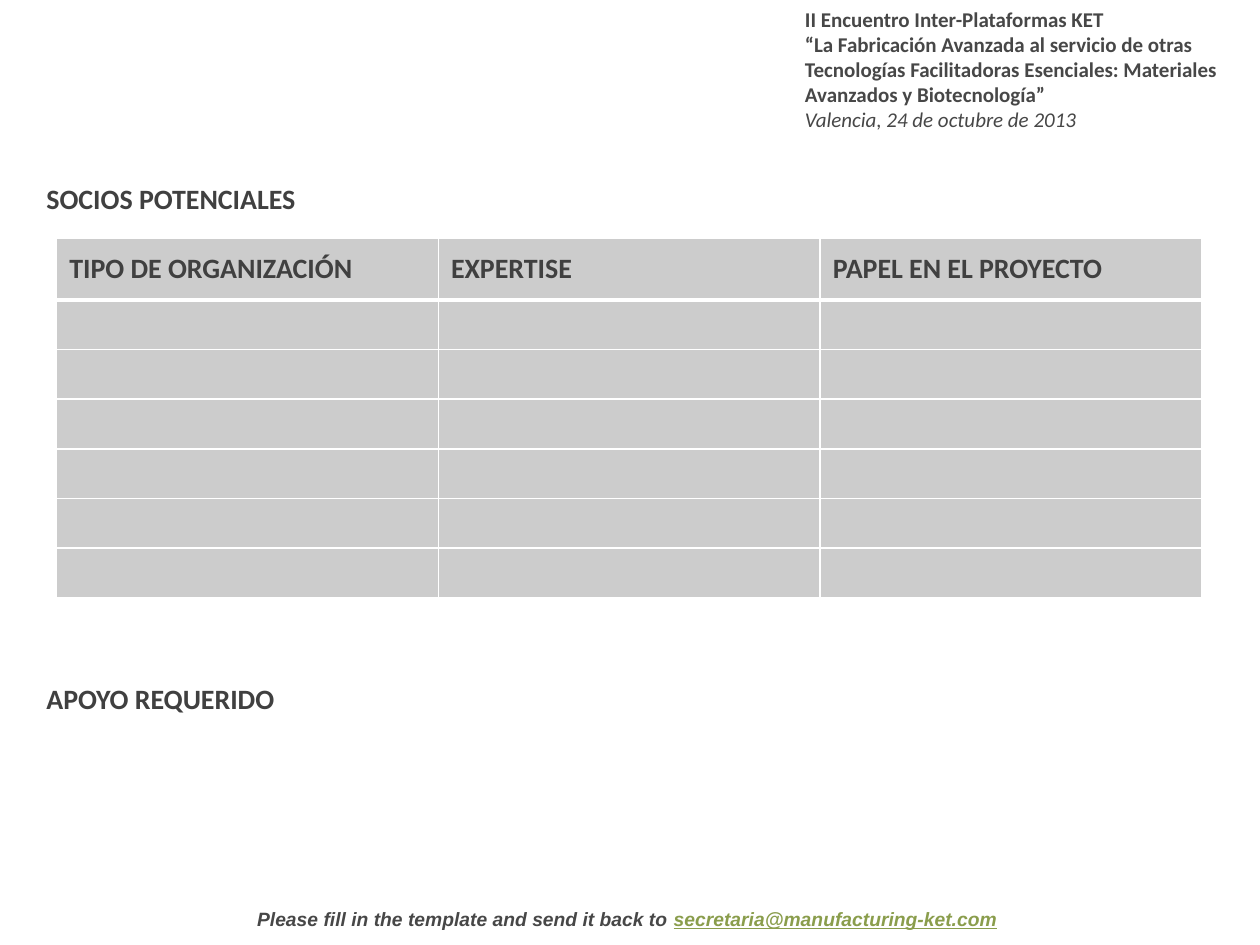
import pptx
import pptx.dml.color
import pptx.enum.text
import pptx.oxml
import pptx.oxml.ns
import pptx.util

Pt = pptx.util.Pt
RGB = pptx.dml.color.RGBColor
TEXT = pptx.enum.text

GREY = RGB(0x47, 0x47, 0x47)
DARK = RGB(0x40, 0x40, 0x40)
GREEN = RGB(0x8A, 0x9D, 0x4C)
PALE = RGB(0xCC, 0xCC, 0xCC)
WHITE = RGB(0xFF, 0xFF, 0xFF)

EVENT = {"name": "Calibri", "size": Pt(12), "color": GREY, "bold": True}
DATE = {**EVENT, "bold": False, "italic": True}
NOTE = {"name": "Arial", "size": Pt(11), "color": GREY, "bold": True,
        "italic": True}
MAIL = {**NOTE, "color": GREEN, "underline": True}
HEAD = {"name": "Calibri", "size": Pt(16), "color": DARK, "bold": True}

COLS = ["TIPO DE ORGANIZACIÓN", "EXPERTISE", "PAPEL EN EL PROYECTO"]
BLANKS = 6


def add_run(para, text, style):
    run = para.add_run()
    run.text = text
    for key, value in style.items():
        if key == "color":
            run.font.color.rgb = value
        else:
            setattr(run.font, key, value)


def add_text(slide, box, paras, align=TEXT.PP_ALIGN.LEFT):
    """Each paragraph is a list of (text, style) runs."""
    frame = slide.shapes.add_textbox(*map(Pt, box)).text_frame
    frame.word_wrap = True
    for i, runs in enumerate(paras):
        para = frame.add_paragraph() if i else frame.paragraphs[0]
        para.alignment = align
        for text, style in runs:
            add_run(para, text, style)


def set_edges(cell, widths):
    """Draw white cell borders; widths maps L, R, T, B to points."""
    props = cell._tc.get_or_add_tcPr()
    for i, side in enumerate("LRTB"):
        line = pptx.oxml.parse_xml(
            f'<a:ln{side} {pptx.oxml.ns.nsdecls("a")} '
            f'w="{int(Pt(widths[side]))}">'
            f'<a:solidFill><a:srgbClr val="{WHITE}"/></a:solidFill>'
            f'</a:ln{side}>')
        props.insert(i, line)


def add_grid(slide):
    left, top, width, first, step = 32.4, 136.08, 654.48, 35.28, 28.4
    table = slide.shapes.add_table(
        BLANKS + 1, len(COLS), Pt(left), Pt(top), Pt(width),
        Pt(first + BLANKS * step)).table
    table.horz_banding = False
    for r, row in enumerate(table.rows):
        row.height = Pt(step if r else first)
        for c, cell in enumerate(row.cells):
            cell.fill.solid()
            cell.fill.fore_color.rgb = PALE
            set_edges(cell, {"L": 1, "R": 1, "T": 3 if r == 1 else 1,
                             "B": 1 if r else 3})
            if r:
                cell.margin_top = cell.margin_bottom = 0
            else:
                cell.vertical_anchor = TEXT.MSO_ANCHOR.MIDDLE
                add_run(cell.text_frame.paragraphs[0], COLS[c], HEAD)


def main():
    deck = pptx.Presentation()
    deck.slide_width, deck.slide_height = Pt(720), Pt(540)
    slide = deck.slides.add_slide(deck.slide_layouts[6])
    add_text(slide, (452.88, 0, 267.12, 80), [
        [("II Encuentro Inter-Plataformas KET", EVENT)],
        [("“La Fabricación Avanzada al servicio de otras Tecnologías "
          "Facilitadoras Esenciales: Materiales Avanzados y "
          "Biotecnología”", EVENT)],
        [("Valencia, 24 de octubre de 2013", DATE)]])
    add_text(slide, (0, 514.8, 720, 20.88), [
        [("Please fill in the template and send it back to ", NOTE),
         ("secretaria@manufacturing-ket.com", MAIL), (" ", NOTE)]],
        TEXT.PP_ALIGN.CENTER)
    add_text(slide, (19.44, 100.08, 683.28, 26.64),
             [[("SOCIOS POTENCIALES", HEAD)]])
    add_grid(slide)
    add_text(slide, (19.44, 385.92, 683.28, 84.96),
             [[("APOYO REQUERIDO", HEAD)]])
    deck.save("out.pptx")


if __name__ == "__main__":
    main()
